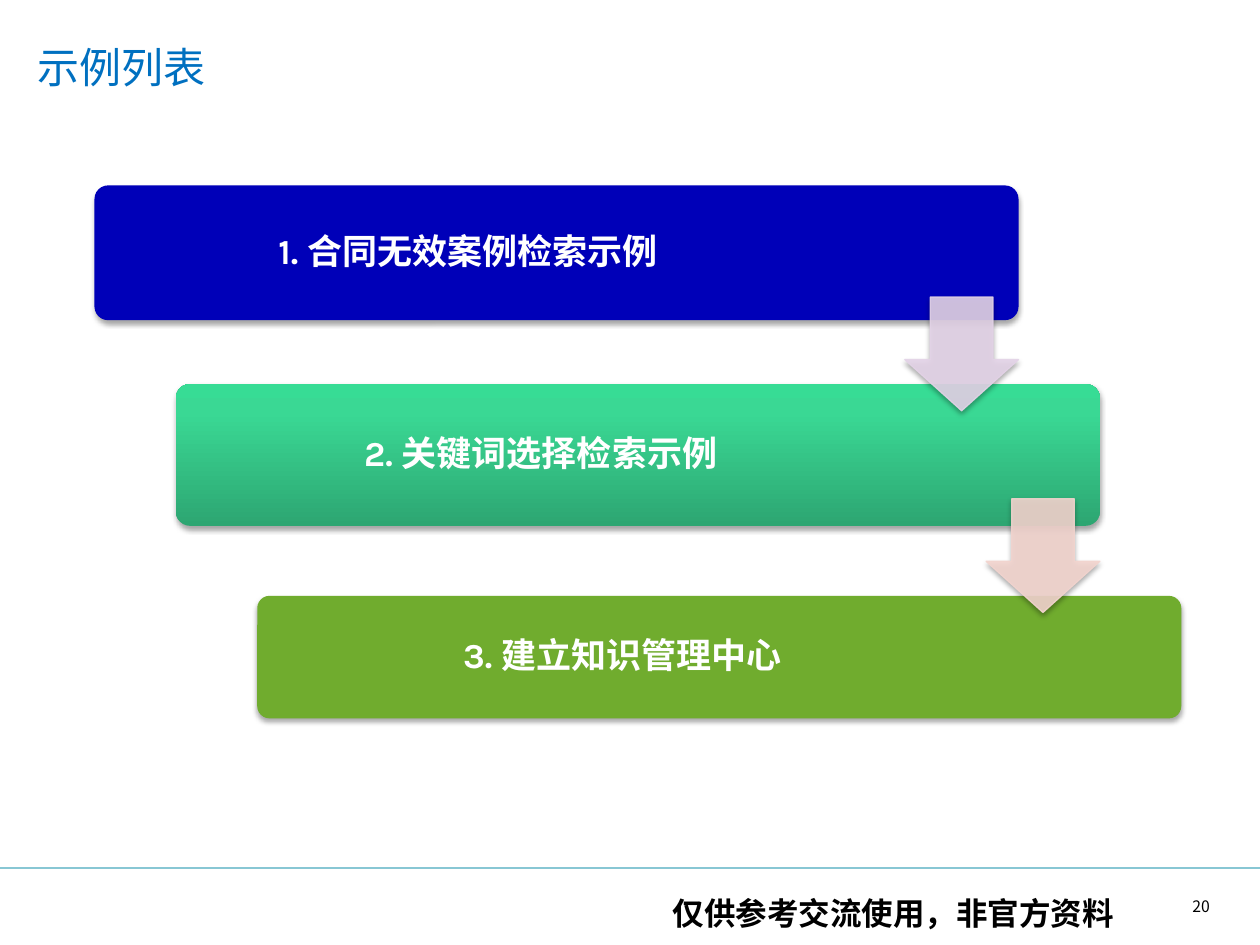
from dataclasses import dataclass

from lxml.etree import SubElement
from pptx import Presentation
from pptx.dml.color import RGBColor
from pptx.enum.shapes import MSO_CONNECTOR, MSO_SHAPE
from pptx.enum.text import MSO_ANCHOR, MSO_AUTO_SIZE, PP_ALIGN
from pptx.oxml.ns import qn
from pptx.util import Pt


@dataclass(frozen=True)
class Theme:
    latin: str = "Karla"
    chinese: str = "Noto Sans CJK SC"
    title: str = "0070C0"
    ink: str = "000000"
    label: str = "FFFFFF"
    rule: str = "88C7D4"
    title_size: float = 24
    label_size: float = 20
    footer_size: float = 18
    number_size: float = 9


@dataclass(frozen=True)
class Step:
    label: str
    top: float
    height: float
    label_width: float
    stops: tuple[tuple[int, str], ...]


@dataclass(frozen=True)
class Arrow:
    top: float
    color: str


THEME = Theme()
STEPS = (
    Step("1. 合同无效案例检索示例", 106, 77, 422, ((0, "0000B8"),)),
    Step("2. 关键词选择检索示例", 219.5, 81, 412, ((0, "2DA672"), (80, "3AD894"), (100, "37DC95"))),
    Step("3. 建立知识管理中心", 340.5, 70, 412.5, ((0, "70AC2E"),)),
)
ARROWS = (Arrow(169.75, "E3D3E7"), Arrow(285, "F2D4CE"))
BAR_LEFT, BAR_SHIFT, BAR_WIDTH = 54, 46.5, 528
ARROW_SIZE = 65
LABEL_GAP = 2.5


def write(box, text: str, *, size: float, color: str, font: str = THEME.chinese,
          bold: bool = False, align=PP_ALIGN.LEFT, anchor=MSO_ANCHOR.TOP,
          spacing: float = 1, inset: tuple[float, float] = (7.2, 3.6)) -> None:
    frame = box.text_frame
    frame.word_wrap = True
    frame.auto_size = MSO_AUTO_SIZE.NONE
    frame.vertical_anchor = anchor
    frame.margin_left = frame.margin_right = Pt(inset[0])
    frame.margin_top = frame.margin_bottom = Pt(inset[1])
    para = frame.paragraphs[0]
    para.alignment = align
    para.line_spacing = spacing
    para.space_before = Pt(0)
    span = para.add_run()
    span.text = text
    span.font.name = font
    span.font.size = Pt(size)
    span.font.bold = bold
    span.font.color.rgb = RGBColor.from_string(color)
    SubElement(span.font._element, qn("a:ea"), typeface=THEME.chinese)


def place(box, left: float, top: float, width: float, height: float) -> None:
    box.left, box.top, box.width, box.height = Pt(left), Pt(top), Pt(width), Pt(height)


def add_box(page, left: float, top: float, width: float, height: float):
    return page.shapes.add_textbox(Pt(left), Pt(top), Pt(width), Pt(height))


def add_color(parent, color: str, opacity: int = 100) -> None:
    node = SubElement(parent, qn("a:srgbClr"), val=color)
    if opacity < 100:
        SubElement(node, qn("a:alpha"), val=str(opacity * 1000))


def add_shadow(shape) -> None:
    shape.shadow.inherit = False
    effects = shape._element.spPr.find(qn("a:effectLst"))
    shadow = SubElement(effects, qn("a:outerShdw"), blurRad=str(Pt(3.1)), dist=str(Pt(1.8)),
                        dir="5400000", rotWithShape="0")
    add_color(shadow, THEME.ink, 35)


def fill_gradient(shape, stops: tuple[tuple[int, str], ...]) -> None:
    shape.fill.gradient()
    shape.fill.gradient_angle = 90
    stop_list = shape._element.spPr.find(qn("a:gradFill")).find(qn("a:gsLst"))
    for old_stop in list(stop_list):
        stop_list.remove(old_stop)
    for position, color in stops:
        add_color(SubElement(stop_list, qn("a:gs"), pos=str(position * 1000)), color)


def draw_step(page, step: Step, left: float) -> None:
    bar = page.shapes.add_shape(MSO_SHAPE.ROUNDED_RECTANGLE, Pt(left), Pt(step.top),
                                Pt(BAR_WIDTH), Pt(step.height))
    bar.adjustments[0] = 0.1
    bar.line.fill.background()
    if len(step.stops) > 1:
        fill_gradient(bar, step.stops)
    else:
        bar.fill.solid()
        bar.fill.fore_color.rgb = RGBColor.from_string(step.stops[0][1])
    add_shadow(bar)
    box = add_box(page, left + LABEL_GAP, step.top + LABEL_GAP,
                  step.label_width, step.height - 2 * LABEL_GAP)
    write(box, step.label, size=THEME.label_size, color=THEME.label, font=THEME.latin, bold=True,
          align=PP_ALIGN.CENTER, anchor=MSO_ANCHOR.MIDDLE, spacing=0.9, inset=(5.5, 5.5))


def draw_arrow(page, arrow: Arrow, right: float) -> None:
    shape = page.shapes.add_shape(MSO_SHAPE.DOWN_ARROW, Pt(right - ARROW_SIZE), Pt(arrow.top),
                                  Pt(ARROW_SIZE), Pt(ARROW_SIZE))
    shape.adjustments[0] = 0.55
    shape.adjustments[1] = 0.45
    shape.line.width = Pt(0.75)
    for paint in (shape.fill, shape.line.fill):
        paint.solid()
        paint.fore_color.rgb = RGBColor.from_string(arrow.color)
    for color in shape._element.spPr.iter(qn("a:srgbClr")):
        SubElement(color, qn("a:alpha"), val="90000")
    add_shadow(shape)


def draw_rule(page, top: float) -> None:
    rule = page.shapes.add_connector(MSO_CONNECTOR.STRAIGHT, Pt(720), Pt(top), Pt(0), Pt(top))
    rule.line.color.rgb = RGBColor.from_string(THEME.rule)
    rule.line.width = Pt(1)
    SubElement(rule._element.spPr, qn("a:effectLst"))


def main() -> None:
    deck = Presentation()
    deck.slide_width, deck.slide_height = Pt(720), Pt(540)
    page = deck.slides.add_slide(deck.slide_layouts[5])
    draw_rule(page, 496)

    title = page.shapes.title
    place(title, 14.4, 20, 677.5, 36)
    write(title, "示例列表", size=THEME.title_size, color=THEME.title, font=THEME.latin,
          anchor=MSO_ANCHOR.BOTTOM)

    lefts = [BAR_LEFT + index * BAR_SHIFT for index in range(len(STEPS))]
    for step, left in zip(STEPS, lefts):
        draw_step(page, step, left)
    for arrow, left in zip(ARROWS, lefts):
        draw_arrow(page, arrow, left + BAR_WIDTH)

    write(add_box(page, 660, 509, 38.5, 18), "20", size=THEME.number_size, color=THEME.ink,
          align=PP_ALIGN.RIGHT, anchor=MSO_ANCHOR.MIDDLE)
    write(add_box(page, 300, 507.5, 343.5, 29), "仅供参考交流使用，非官方资料",
          size=THEME.footer_size, color=THEME.ink, bold=True, align=PP_ALIGN.RIGHT)
    deck.save("out.pptx")


if __name__ == "__main__":
    main()
